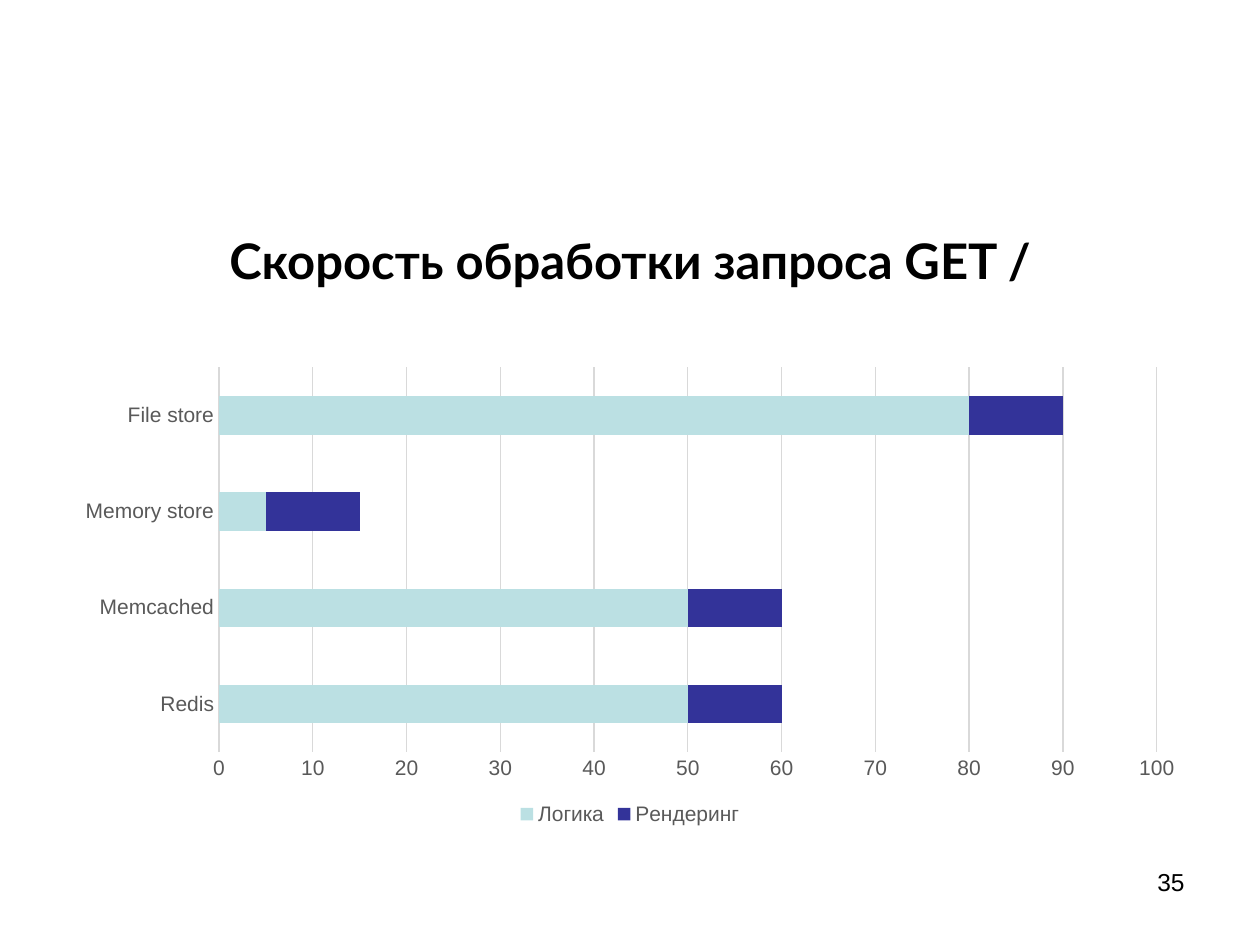
from pptx import Presentation
from pptx.chart.data import CategoryChartData
from pptx.dml.color import RGBColor
from pptx.enum.chart import XL_CHART_TYPE as ChartType, XL_LEGEND_POSITION as LegendPosition
from pptx.enum.chart import XL_TICK_MARK as TickMark
from pptx.enum.text import MSO_ANCHOR as Anchor, PP_ALIGN as Align
from pptx.util import Pt

TEXT, LABEL, GRID = "000000", "595959", "D9D9D9"


def color(value):
    return RGBColor.from_string(value)


def format_font(font, value, **attributes):
    font.color.rgb = color(value)
    for name, setting in attributes.items():
        setattr(font, name, setting)


presentation = Presentation()
presentation.slide_width = Pt(720)
presentation.slide_height = Pt(540)
slide = presentation.slides.add_slide(presentation.slide_layouts[6])

# Title and page number
texts = [
    ("Скорость обработки запроса GET /", (36, 105.84, 648, 84.96), Anchor.MIDDLE, Align.CENTER,
     {"name": "Lato", "size": Pt(28), "bold": True}),
    ("35", (516.24, 491.76, 167.76, 37.44), Anchor.TOP, Align.RIGHT,
     {"name": "Arial", "size": Pt(14)}),
]
for text, place, anchor, alignment, font_format in texts:
    frame = slide.shapes.add_textbox(*map(Pt, place)).text_frame
    frame.word_wrap = True
    frame.vertical_anchor = anchor
    paragraph = frame.paragraphs[0]
    paragraph.alignment = alignment
    run = paragraph.add_run()
    run.text = text
    format_font(run.font, TEXT, **font_format)

# Request time by cache store
series_formats = {
    "Логика": ([50, 50, 5, 80], "BBE0E3"),
    "Рендеринг": ([10, 10, 10, 10], "333399"),
}
chart_data = CategoryChartData()
chart_data.categories = ["Redis", "Memcached", "Memory store", "File store"]
for name, (values, fill) in series_formats.items():
    chart_data.add_series(name, values)

chart = slide.shapes.add_chart(
    ChartType.BAR_STACKED, Pt(36), Pt(204.48), Pt(648), Pt(270), chart_data).chart
chart.has_title = False
format_font(chart.font, TEXT, name="Arial", size=Pt(10))

plot = chart.plots[0]
plot.gap_width = 150
plot.overlap = 100
plot.vary_by_categories = False
for series in plot.series:
    series.format.fill.solid()
    series.format.fill.fore_color.rgb = color(series_formats[series.name][1])

category_axis, value_axis = chart.category_axis, chart.value_axis
for axis in (category_axis, value_axis):
    axis.major_tick_mark = axis.minor_tick_mark = TickMark.NONE
category_axis.has_major_gridlines = False
value_axis.has_major_gridlines = True
value_axis.minimum_scale = 0
value_axis.maximum_scale = 100
value_axis.major_unit = 10
value_axis.format.line.fill.background()
for line in (category_axis.format.line, value_axis.major_gridlines.format.line):
    line.color.rgb = color(GRID)
    line.width = Pt(0.75)

chart.has_legend = True
chart.legend.position = LegendPosition.BOTTOM
chart.legend.include_in_layout = False
for font in (category_axis.tick_labels.font, value_axis.tick_labels.font, chart.legend.font):
    format_font(font, LABEL, name="Arial", size=Pt(12))

presentation.save("out.pptx")
